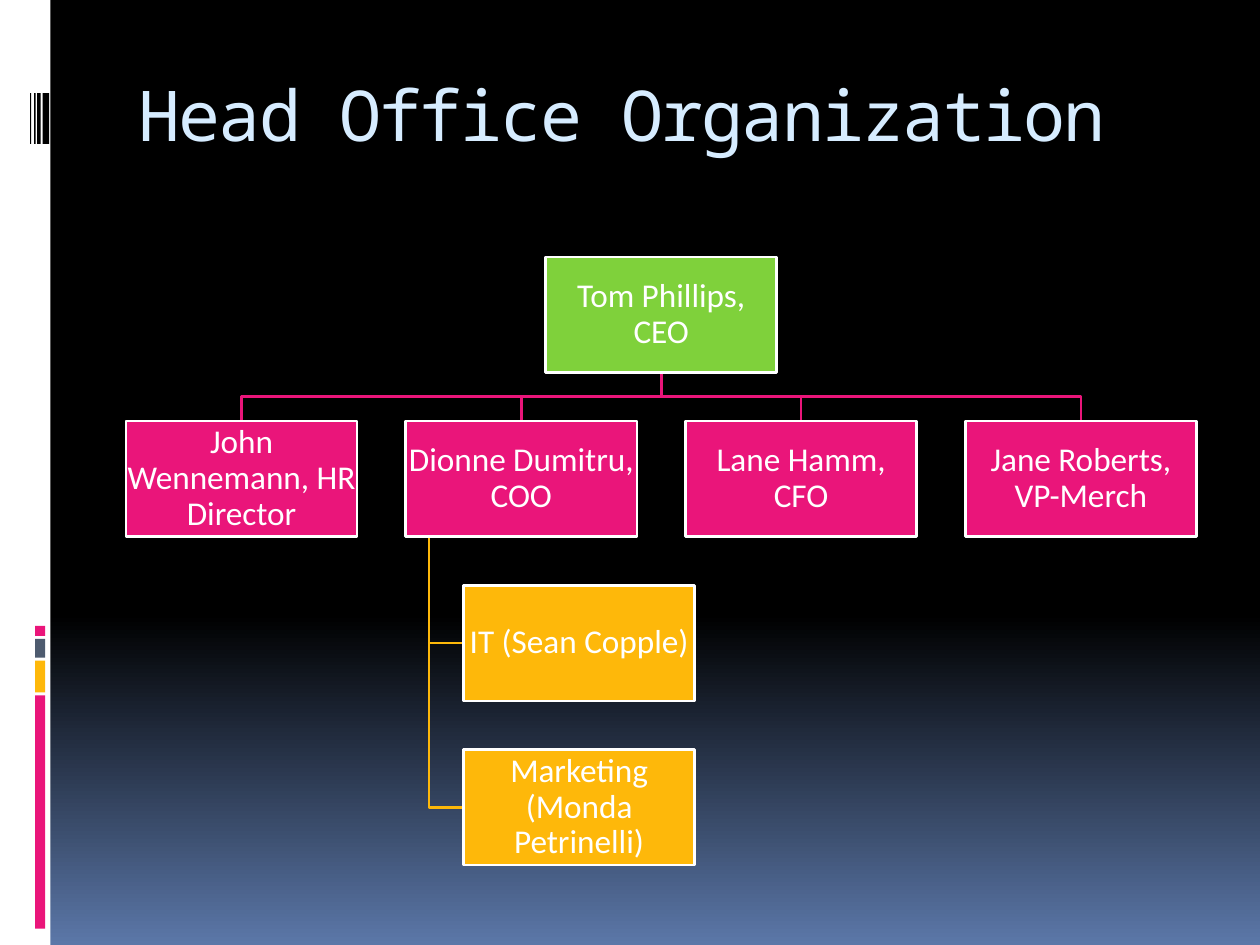
from pptx import Presentation
from pptx.dml.color import RGBColor
from pptx.enum.shapes import MSO_SHAPE
from pptx.enum.text import MSO_ANCHOR, PP_ALIGN
from pptx.util import Cm, Pt

WHITE, BLACK, PINK, AMBER = "FFFFFF", "000000", "EA157A", "FEB80A"
GREEN, SLATE, SKY, BLUE = "7FD13B", "4E5B6F", "D6ECFF", "5B77A8"
BOX_W, BOX_H = 4.66, 2.33
LEFT, COL_STEP = 2.54, 5.64
TOP, ROW_STEP = 5.18, 3.31


def rgb(value):
    return RGBColor.from_string(value)


class OrgSlide:
    """Holds the chart style and the slide being drawn."""

    font, title_font = "Calibri", "Noto Sans Mono"
    size, title_size, line_width = 19, 40, 1.5

    def __init__(self, s):
        self.s = s

    def background(self, start, end, hold):
        fill = self.s.background.fill
        fill.gradient()
        fill.gradient_angle = 270
        for stop, color, position in zip(fill.gradient_stops, (start, end), (hold, 1)):
            stop.color.rgb = rgb(color)
            stop.position = position

    def rect(self, x, y, w, h, color):
        sp = self.s.shapes.add_shape(MSO_SHAPE.RECTANGLE, Cm(x), Cm(y), Cm(w), Cm(h))
        sp.shadow.inherit = False
        sp.fill.solid()
        sp.fill.fore_color.rgb = rgb(color)
        sp.line.fill.background()
        return sp

    def label(self, tf, text, font, size, color):
        p = tf.paragraphs[0]
        r = p.add_run()
        r.text = text
        r.font.name, r.font.size = font, Pt(size)
        r.font.color.rgb = rgb(color)
        return p, r

    def title(self, x, y, w, h, text):
        tf = self.s.shapes.add_textbox(Cm(x), Cm(y), Cm(w), Cm(h)).text_frame
        tf.word_wrap = True
        tf.margin_top = Cm(0.03)
        p, r = self.label(tf, text, self.title_font, self.title_size, SKY)
        r._r.get_or_add_rPr().set("spc", "-100")

    def box(self, x, y, text, color):
        sp = self.rect(x, y, BOX_W, BOX_H, color)
        sp.line.color.rgb = rgb(WHITE)
        sp.line.width = Pt(self.line_width)
        tf = sp.text_frame
        tf.word_wrap = True
        tf.vertical_anchor = MSO_ANCHOR.MIDDLE
        tf.margin_left = tf.margin_right = tf.margin_top = tf.margin_bottom = Cm(0.03)
        p, r = self.label(tf, text, self.font, self.size, WHITE)
        p.alignment = PP_ALIGN.CENTER
        p.line_spacing = 0.9

    def elbow(self, points, color):
        start, *rest = [(Cm(x), Cm(y)) for x, y in points]
        builder = self.s.shapes.build_freeform(*start)
        builder.add_line_segments(rest, close=False)
        sp = builder.convert_to_shape()
        sp.shadow.inherit = False
        sp.fill.background()
        sp.line.color.rgb = rgb(color)
        sp.line.width = Pt(self.line_width)


def main():
    prs = Presentation()
    prs.slide_width, prs.slide_height = Cm(25.4), Cm(19.05)
    org = OrgSlide(prs.slides.add_slide(prs.slide_layouts[6]))
    org.background(BLACK, BLUE, 0.65)

    org.rect(0, 0, 1.02, 19.05, WHITE)
    for y, h, color in ((14.02, 4.7, PINK), (13.32, 0.64, AMBER),
                        (12.88, 0.38, SLATE), (12.62, 0.2, PINK)):
        org.rect(0.71, y, 0.2, h, color)
    for x, w in ((0.86, 0.13), (0.75, 0.07), (0.69, 0.03), (0.61, 0.02)):
        org.rect(x, 1.88, w, 1.02, BLACK)
    org.title(2.54, 1.42, 21.59, 2.54, "Head Office Organization")

    directors = ["John Wennemann, HR Director", "Dionne Dumitru, COO",
                 "Lane Hamm, CFO", "Jane Roberts, VP-Merch"]
    teams = ["IT (Sean Copple)", "Marketing (Monda Petrinelli)"]
    columns = [LEFT + i * COL_STEP for i in range(len(directors))]
    rows = [TOP + i * ROW_STEP for i in range(4)]
    ceo_x = (columns[0] + columns[-1]) / 2
    ceo_mid, ceo_bottom = ceo_x + BOX_W / 2, TOP + BOX_H
    bus_y = (ceo_bottom + rows[1]) / 2
    stem_x, team_x = columns[1] + BOX_W / 10, columns[1] + BOX_W / 4

    for x in columns:
        mid = x + BOX_W / 2
        org.elbow([(ceo_mid, ceo_bottom), (ceo_mid, bus_y),
                   (mid, bus_y), (mid, rows[1])], PINK)
    for y in rows[2:]:
        mid = y + BOX_H / 2
        org.elbow([(stem_x, rows[1] + BOX_H), (stem_x, mid), (team_x, mid)], AMBER)

    org.box(ceo_x, TOP, "Tom Phillips, CEO", GREEN)
    for x, text in zip(columns, directors):
        org.box(x, rows[1], text, PINK)
    for y, text in zip(rows[2:], teams):
        org.box(team_x, y, text, AMBER)

    prs.save("out.pptx")


if __name__ == "__main__":
    main()
